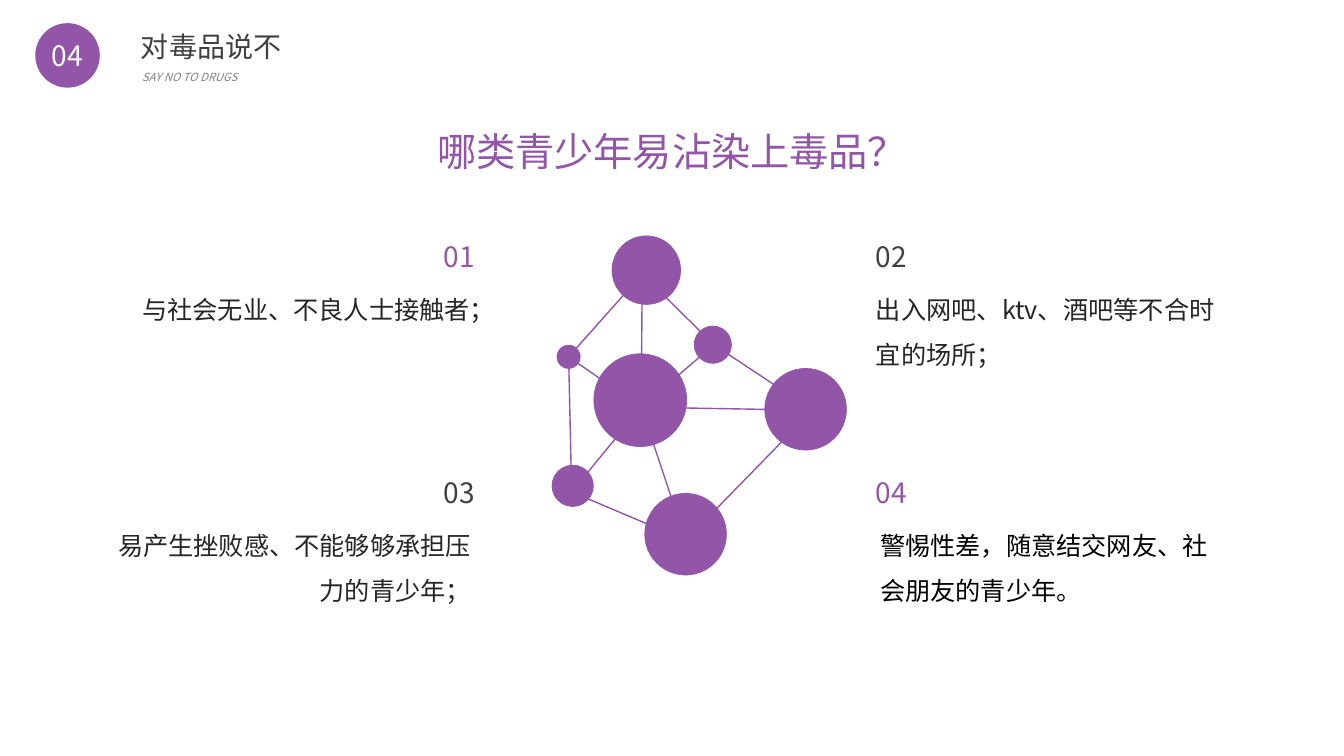
import pptx
import pptx.dml.color
import pptx.enum.shapes
import pptx.enum.text
import pptx.oxml.ns
import pptx.util
from lxml import etree

Inches = pptx.util.Inches
Pt = pptx.util.Pt
RGBColor = pptx.dml.color.RGBColor
ALIGN = pptx.enum.text.PP_ALIGN
ANCHOR = pptx.enum.text.MSO_ANCHOR
qn = pptx.oxml.ns.qn

PURPLE = RGBColor(0x93, 0x55, 0xA8)
WHITE = RGBColor(0xFF, 0xFF, 0xFF)
BLACK = RGBColor(0, 0, 0)
INK = RGBColor(0x26, 0x26, 0x26)
DARK = RGBColor(0x40, 0x40, 0x40)
GRAY = RGBColor(0x80, 0x80, 0x80)
FONT = "Noto Sans CJK SC"

# Molecule: centre and diameter of each circle, and the joint where its bonds meet
NODES = {
    "hub": (6.35, 3.97, 0.92, (6.36, 4.04)),
    "top": (6.41, 2.68, 0.68, (6.37, 2.72)),
    "lower left": (5.68, 4.82, 0.41, (5.67, 4.88)),
    "right": (7.99, 4.06, 0.81, (8.06, 4.07)),
    "upper left": (5.64, 3.54, 0.23, (5.64, 3.54)),
    "bottom": (6.8, 5.3, 0.81, (6.8, 5.36)),
    "upper right": (7.07, 3.42, 0.37, (7.08, 3.42)),
}
RING = ["top", "upper right", "right", "bottom", "lower left", "upper left"]
BONDS = list(zip(RING, RING[1:] + RING[:1])) + [("hub", name) for name in RING]

# Number, its colour, row top, alignment, number left, text left, text width, text colour, text
POINTS = [
    ("01", PURPLE, 2.33, ALIGN.RIGHT, 2.44, 1.31, 3.45, INK, "与社会无业、不良人士接触者；"),
    ("02", DARK, 2.33, ALIGN.LEFT, 8.59, 8.59, 3.56, INK, "出入网吧、ktv、酒吧等不合时宜的场所；"),
    ("03", DARK, 4.67, ALIGN.RIGHT, 2.44, 1.07, 3.7, INK, "易产生挫败感、不能够够承担压力的青少年；"),
    ("04", PURPLE, 4.67, ALIGN.LEFT, 8.59, 8.63, 3.52, BLACK, "警惕性差，随意结交网友、社会朋友的青少年。"),
]


class SlideBuilder:
    def __init__(self, prs):
        self.s = prs.slides.add_slide(prs.slide_layouts[5])

    def fill_text(self, tf, text, size, color, align, spacing=1.0, italic=False):
        tf.word_wrap = True
        tf.auto_size = pptx.enum.text.MSO_AUTO_SIZE.NONE
        p = tf.paragraphs[0]
        p.text = text
        p.alignment = align
        p.line_spacing = spacing
        p.font.name = FONT
        p.font.size = Pt(size)
        p.font.color.rgb = color
        p.font.italic = italic
        for r in p.runs:
            etree.SubElement(r.font._element, qn("a:ea"), typeface=FONT)

    def title(self, text, left, top, width, height):
        sp = self.s.shapes.title
        sp.left, sp.top = Inches(left), Inches(top)
        sp.width, sp.height = Inches(width), Inches(height)
        sp.text_frame.vertical_anchor = ANCHOR.TOP
        self.fill_text(sp.text_frame, text, 28, PURPLE, ALIGN.CENTER)

    def text(self, text, left, top, width, height, size, color, align=ALIGN.LEFT, **style):
        sp = self.s.shapes.add_textbox(Inches(left), Inches(top), Inches(width), Inches(height))
        self.fill_text(sp.text_frame, text, size, color, align, **style)

    def circle(self, x, y, diameter):
        sp = self.s.shapes.add_shape(
            pptx.enum.shapes.MSO_SHAPE.OVAL,
            Inches(x - diameter / 2), Inches(y - diameter / 2), Inches(diameter), Inches(diameter))
        sp.shadow.inherit = False
        sp.fill.solid()
        sp.fill.fore_color.rgb = PURPLE
        sp.line.color.rgb = PURPLE
        sp.line.width = Pt(0.5)
        return sp

    def badge(self, text, x, y, diameter):
        sp = self.circle(x, y, diameter)
        sp.line.fill.background()
        tf = sp.text_frame
        tf.margin_left = tf.margin_right = tf.margin_top = tf.margin_bottom = 0
        tf.vertical_anchor = ANCHOR.MIDDLE
        self.fill_text(tf, text, 20, WHITE, ALIGN.CENTER)

    def bond(self, start, end):
        line = self.s.shapes.add_connector(
            pptx.enum.shapes.MSO_CONNECTOR.STRAIGHT, *map(Inches, start + end))
        line.line.color.rgb = PURPLE
        line.line.width = Pt(1)
        etree.SubElement(line._element.spPr, qn("a:effectLst"))


def main():
    prs = pptx.Presentation()
    prs.slide_width, prs.slide_height = Inches(13.33), Inches(7.5)
    slide = SlideBuilder(prs)

    slide.badge("04", 0.67, 0.55, 0.64)
    slide.text("对毒品说不", 1.3, 0.24, 1.68, 0.43, 20, DARK)
    slide.text("SAY NO TO DRUGS", 1.31, 0.65, 2.54, 0.23, 8, GRAY, italic=True)
    slide.title("哪类青少年易沾染上毒品？", 4.23, 1.21, 4.87, 0.57)

    for start, end in BONDS:
        slide.bond(NODES[start][3], NODES[end][3])
    for x, y, diameter, _ in NODES.values():
        slide.circle(x, y, diameter)

    for number, accent, top, align, number_left, left, width, color, text in POINTS:
        slide.text(number, number_left, top, 2.37, 0.43, 20, accent, align)
        slide.text(text, left, top + 0.39, width, 1, 18, color, align, spacing=1.5)

    prs.save("out.pptx")


if __name__ == "__main__":
    main()
